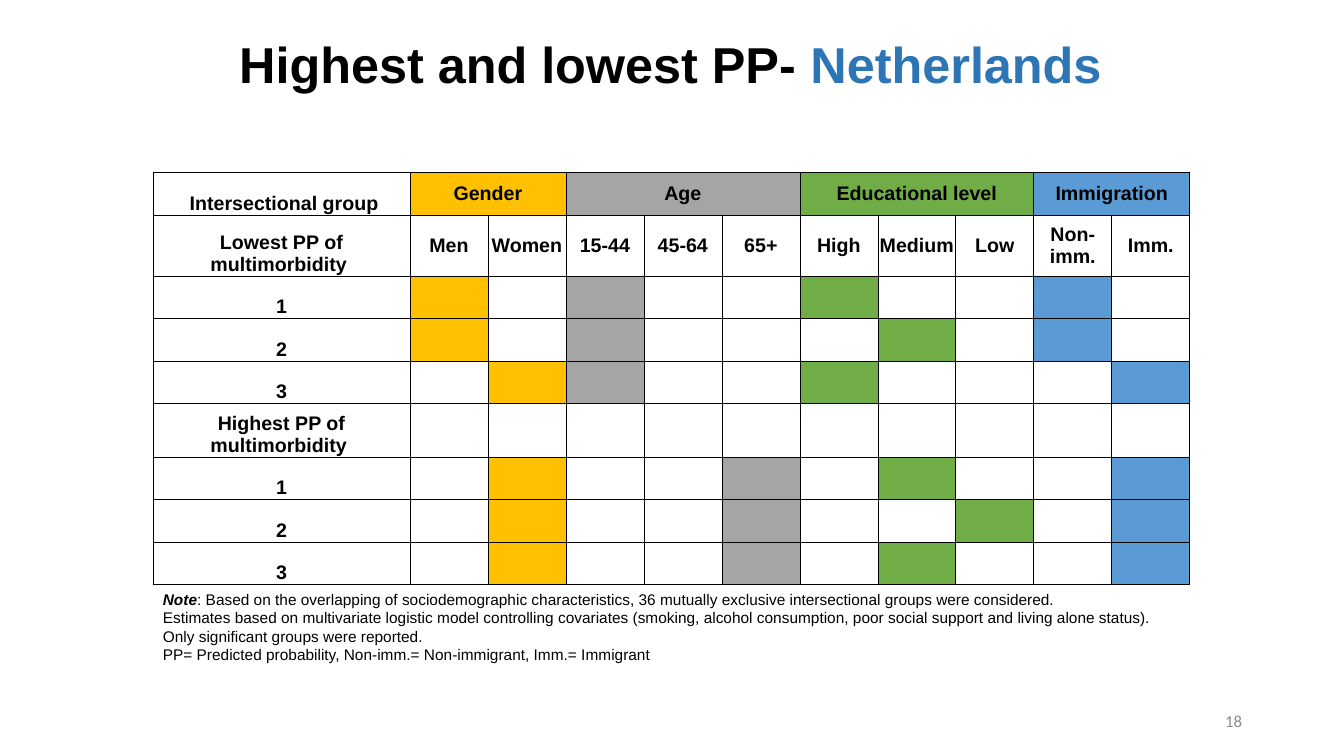
import dataclasses
import typing

import lxml.etree
import pptx
import pptx.dml.color
import pptx.enum.text
import pptx.oxml.ns
import pptx.table
import pptx.util

RGBColor = pptx.dml.color.RGBColor
BLACK = RGBColor(0x00, 0x00, 0x00)
WHITE = RGBColor(0xFF, 0xFF, 0xFF)
GOLD = RGBColor(0xFF, 0xC0, 0x00)
GREY = RGBColor(0xA5, 0xA5, 0xA5)
GREEN = RGBColor(0x70, 0xAD, 0x47)
BLUE = RGBColor(0x5B, 0x9B, 0xD5)
NAVY = RGBColor(0x2E, 0x75, 0xB6)
PALE = RGBColor(0x8C, 0x8C, 0x8C)

ALIGN = pptx.enum.text.PP_ALIGN
ANCHOR = pptx.enum.text.MSO_ANCHOR
FIT = pptx.enum.text.MSO_AUTO_SIZE
SCALE = 914400 / 100.8


def px(count: int) -> pptx.util.Emu:
    return pptx.util.Emu(round(count * SCALE))


@dataclasses.dataclass(frozen=True)
class Group:
    name: str
    tint: RGBColor
    labels: tuple[str, ...]


@dataclasses.dataclass(frozen=True)
class Row:
    label: str
    height: int
    marks: tuple[str, ...] = ()


GROUPS = (
    Group("Gender", GOLD, ("Men", "Women")),
    Group("Age", GREY, ("15-44", "45-64", "65+")),
    Group("Educational level", GREEN, ("High", "Medium", "Low")),
    Group("Immigration", BLUE, ("Non-imm.", "Imm.")),
)
ROWS = (
    Row(" Intersectional group", 43),
    Row("Lowest PP of multimorbidity ", 61),
    Row("1", 42, ("Men", "15-44", "High", "Non-imm.")),
    Row("2", 43, ("Men", "15-44", "Medium", "Non-imm.")),
    Row("3", 42, ("Women", "15-44", "High", "Imm.")),
    Row("Highest PP of multimorbidity ", 54),
    Row("1", 42, ("Women", "65+", "Medium", "Imm.")),
    Row("2", 43, ("Women", "65+", "Low", "Imm.")),
    Row("3", 42, ("Women", "65+", "Medium", "Imm.")),
)
NOTES = (
    ": Based on the overlapping of sociodemographic characteristics, "
    "36 mutually exclusive intersectional groups were considered.",
    "Estimates based on multivariate logistic model controlling covariates "
    "(smoking, alcohol consumption, poor social support and living alone status).",
    "Only significant groups were reported.",
    "PP= Predicted probability, Non-imm.= Non-immigrant, Imm.= Immigrant",
)
LEFT, WIDTH = 153, 1035
FIRST, STEP = 257, 78

HEAD = {"name": "Arial", "size": pptx.util.Pt(36), "bold": True}
GRID = {"name": "Arial", "size": pptx.util.Pt(14), "bold": True}
NOTE = {"name": "Arial", "size": pptx.util.Pt(11), "bold": False}
LEAD = NOTE | {"bold": True, "italic": True}
PAGE = {"name": "Calibri", "size": pptx.util.Pt(12)}
INSETS = {"margin_left": px(1), "margin_right": px(1), "margin_top": px(1), "margin_bottom": 0}


def format_with(item: typing.Any, values: dict[str, typing.Any]) -> None:
    for key, value in values.items():
        setattr(item, key, value)


def place(shape: typing.Any, left: int, top: int, width: int, height: int) -> None:
    format_with(shape, {"left": px(left), "top": px(top), "width": px(width), "height": px(height)})


def add_run(para: typing.Any, text: str, style: dict[str, typing.Any], ink: RGBColor) -> None:
    run = para.add_run()
    run.text = text
    format_with(run.font, style)
    run.font.color.rgb = ink


def add_edges(cell: pptx.table._Cell) -> None:
    props = cell._tc.get_or_add_tcPr()
    for side in "LRTB":
        line = lxml.etree.SubElement(props, pptx.oxml.ns.qn(f"a:ln{side}"), w="6350")
        fill = lxml.etree.SubElement(line, pptx.oxml.ns.qn("a:solidFill"))
        lxml.etree.SubElement(fill, pptx.oxml.ns.qn("a:srgbClr"), val=str(BLACK))


def fill_cell(cell: pptx.table._Cell, text: str, tint: RGBColor, anchor: typing.Any) -> None:
    format_with(cell, INSETS | {"vertical_anchor": anchor})
    add_edges(cell)
    cell.fill.solid()
    cell.fill.fore_color.rgb = tint
    para = cell.text_frame.paragraphs[0]
    para.alignment = ALIGN.CENTER
    format_with(para.font, GRID)
    if text:
        add_run(para, text, GRID, BLACK)


def add_title(slide: typing.Any) -> None:
    title = slide.shapes.title
    place(title, LEFT, 10, WIDTH, 114)
    frame = title.text_frame
    format_with(frame, {"word_wrap": True, "auto_size": FIT.NONE, "vertical_anchor": ANCHOR.MIDDLE})
    para = frame.paragraphs[0]
    format_with(para, {"alignment": ALIGN.CENTER, "line_spacing": 0.9})
    add_run(para, "Highest and lowest PP- ", HEAD, BLACK)
    add_run(para, "Netherlands", HEAD, NAVY)


def add_grid(slide: typing.Any) -> None:
    heads = [(group, label) for group in GROUPS for label in group.labels]
    high = sum(row.height for row in ROWS)
    shape = slide.shapes.add_table(
        len(ROWS), len(heads) + 1, px(LEFT), px(172), px(FIRST + STEP * len(heads)), px(high)
    )
    table = shape.table
    format_with(table, {"first_row": False, "horz_banding": False})
    for index, column in enumerate(table.columns):
        column.width = px(STEP if index else FIRST)
    for y, row in enumerate(ROWS):
        table.rows[y].height = px(row.height)
        fill_cell(table.cell(y, 0), row.label, WHITE, ANCHOR.BOTTOM)
        for x, (group, label) in enumerate(heads, 1):
            text = label if y == 1 else ""
            if y == 0 and label == group.labels[0]:
                text = group.name
            tint = group.tint if y == 0 or label in row.marks else WHITE
            fill_cell(table.cell(y, x), text, tint, ANCHOR.MIDDLE)
    start = 1
    for group in GROUPS:
        stop = start + len(group.labels)
        table.cell(0, start).merge(table.cell(0, stop - 1))
        start = stop


def add_notes(slide: typing.Any) -> None:
    box = slide.shapes.add_textbox(px(LEFT), px(585), px(WIDTH), px(85))
    frame = box.text_frame
    format_with(frame, {"word_wrap": True, "auto_size": FIT.SHAPE_TO_FIT_TEXT})
    for index, text in enumerate(NOTES):
        para = frame.add_paragraph() if index else frame.paragraphs[0]
        if index == 0:
            add_run(para, "Note", LEAD, BLACK)
        add_run(para, text, NOTE, BLACK)


def add_page(slide: typing.Any) -> None:
    box = slide.shapes.add_textbox(px(950), px(701), px(302), px(40))
    frame = box.text_frame
    format_with(frame, {"word_wrap": True, "vertical_anchor": ANCHOR.MIDDLE})
    para = frame.paragraphs[0]
    para.alignment = ALIGN.RIGHT
    add_run(para, "18", PAGE, PALE)


def main() -> None:
    deck = pptx.Presentation()
    format_with(deck, {"slide_width": px(1344), "slide_height": px(756)})
    slide = deck.slides.add_slide(deck.slide_layouts[5])
    add_title(slide)
    add_page(slide)
    add_grid(slide)
    add_notes(slide)
    deck.save("out.pptx")


if __name__ == "__main__":
    main()
